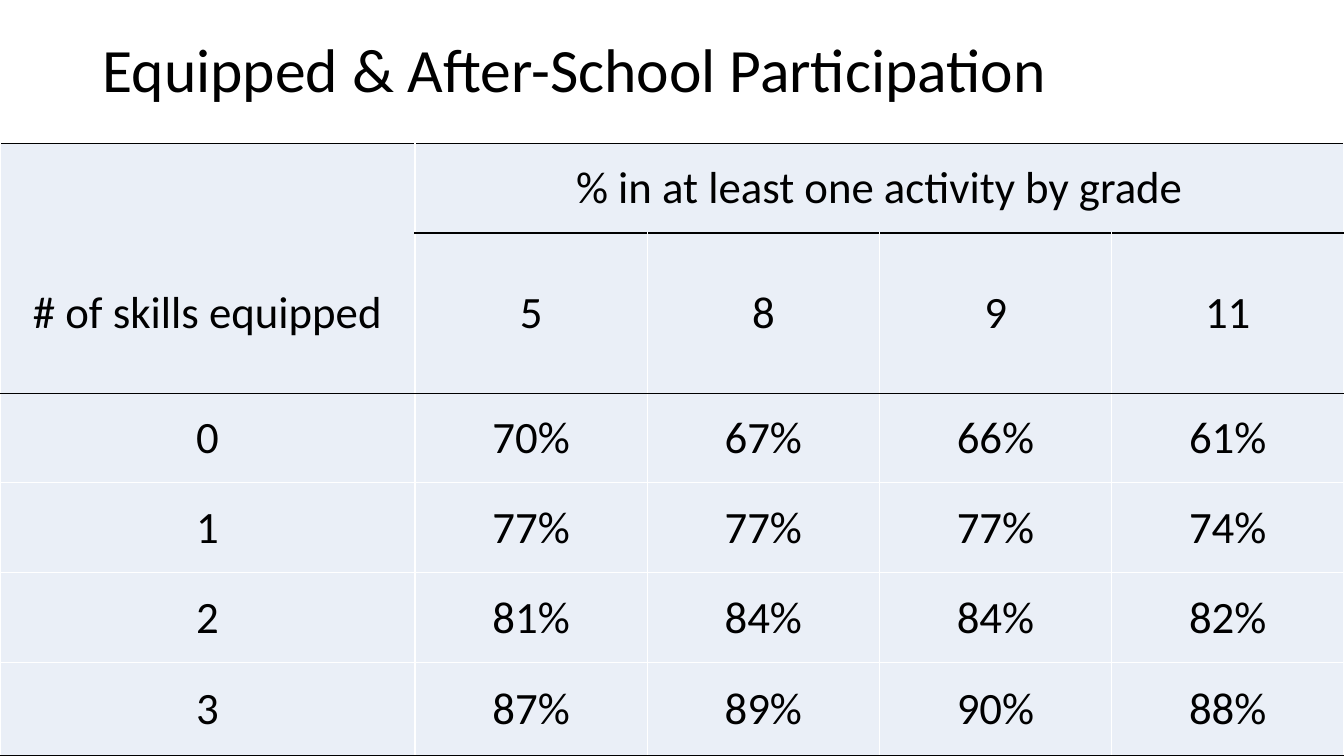
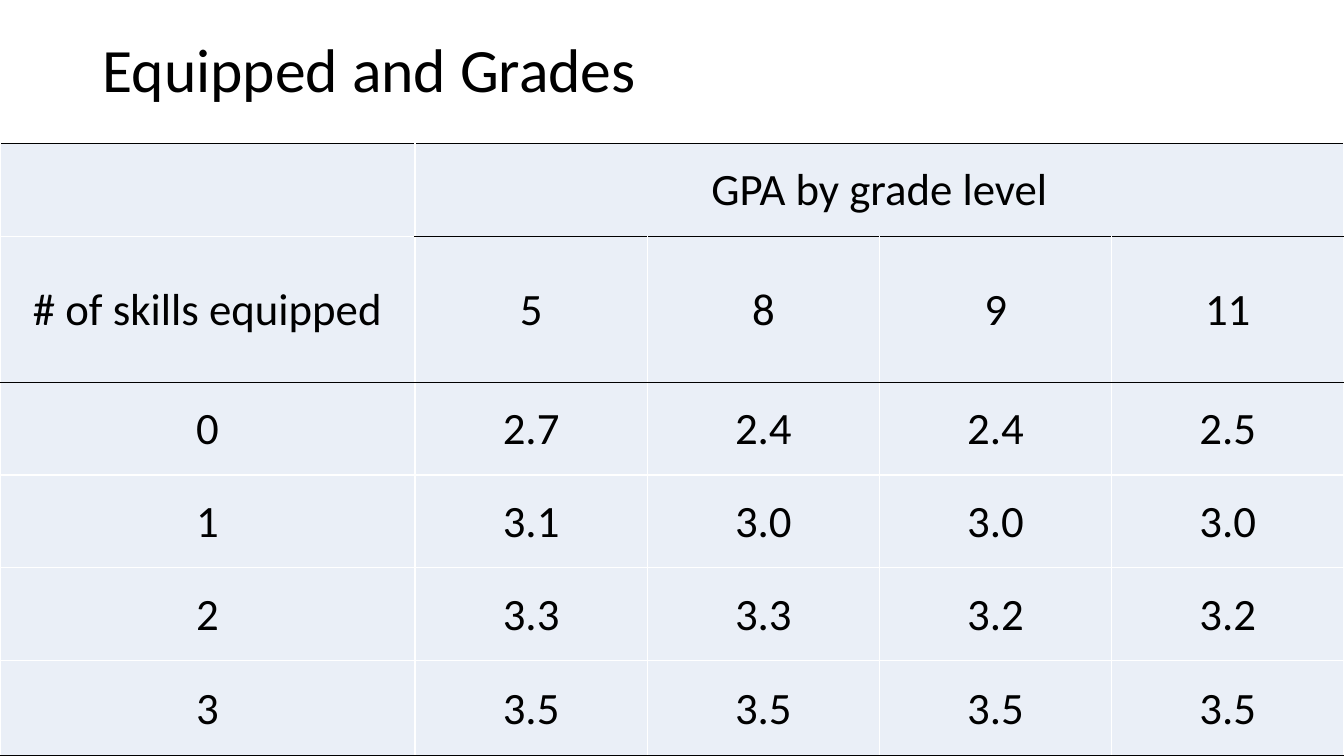
import pptx
import pptx.dml.color
import pptx.enum.text
import pptx.oxml.ns
import pptx.util
from lxml import etree

Cm = pptx.util.Cm
Pt = pptx.util.Pt
PP_ALIGN = pptx.enum.text.PP_ALIGN
MSO_ANCHOR = pptx.enum.text.MSO_ANCHOR

FONT = "Calibri"
BLACK, WHITE, PALE = "000000", "FFFFFF", "EAEFF7"
SLIDE_W, SLIDE_H = 33.87, 19.05
TABLE_TOP = 3.61
LABEL_W = 10.46
HEADER = ["# of skills equipped", "5", "8", "9", "11"]
RULES = [BLACK, BLACK, BLACK, WHITE, WHITE, WHITE, BLACK]

SLIDES = [
    {
        "title": "Equipped & After-School Participation",
        "group": "% in at least one activity by grade",
        "heights": [2.26, 4.04, 2.26, 2.26, 2.26, 2.36],
        "label_rule": None,
        "rows": [
            ["0", "70%", "67%", "66%", "61%"],
            ["1", "77%", "77%", "77%", "74%"],
            ["2", "81%", "84%", "84%", "82%"],
            ["3", "87%", "89%", "90%", "88%"],
        ],
    },
    {
        "title": "Equipped and Grades",
        "group": "GPA by grade level",
        "heights": [2.34, 3.68, 2.34, 2.34, 2.34, 2.4],
        "label_rule": WHITE,
        "rows": [
            ["0", "2.7", "2.4", "2.4", "2.5"],
            ["1", "3.1", "3.0", "3.0", "3.0"],
            ["2", "3.3", "3.3", "3.2", "3.2"],
            ["3", "3.5", "3.5", "3.5", "3.5"],
        ],
    },
]


def rgb(color):
    return pptx.dml.color.RGBColor.from_string(color)


def add_run(p, text, size):
    r = p.add_run()
    r.text = text
    r.font.name = FONT
    r.font.size = Pt(size)
    r.font.bold = False
    r.font.color.rgb = rgb(BLACK)


def add_border(cell, side, color):
    qn = pptx.oxml.ns.qn
    tcPr = cell._tc.get_or_add_tcPr()
    ln = etree.SubElement(tcPr, qn("a:ln" + side), w=str(Pt(1)))
    if color is None:
        etree.SubElement(ln, qn("a:noFill"))
    else:
        fill = etree.SubElement(ln, qn("a:solidFill"))
        etree.SubElement(fill, qn("a:srgbClr"), val=color)


def format_cell(cell, text, top, bottom):
    for side, color in zip("LRTB", (WHITE, WHITE, top, bottom)):
        add_border(cell, side, color)
    cell.fill.solid()
    cell.fill.fore_color.rgb = rgb(PALE)
    cell.vertical_anchor = MSO_ANCHOR.MIDDLE
    cell.margin_left = cell.margin_right = cell.margin_top = Cm(0.03)
    cell.margin_bottom = 0
    p = cell.text_frame.paragraphs[0]
    p.alignment = PP_ALIGN.CENTER
    if text:
        add_run(p, text, 32)


def add_grade_table(s, content):
    heights = content["heights"]
    rows = [["", content["group"], "", "", ""], HEADER] + content["rows"]
    n_cols = len(HEADER)
    table = s.shapes.add_table(
        len(rows), n_cols, 0, Cm(TABLE_TOP), Cm(SLIDE_W), Cm(sum(heights))
    ).table
    table.first_row = False
    table.horz_banding = False
    grade_w = (SLIDE_W - LABEL_W) / (n_cols - 1)
    for i, column in enumerate(table.columns):
        column.width = Cm(grade_w if i else LABEL_W)
    for row, height in zip(table.rows, heights):
        row.height = Cm(height)

    label_rules = RULES[:1] + [content["label_rule"]] + RULES[2:]
    for i, texts in enumerate(rows):
        for j, text in enumerate(texts):
            rules = RULES if j else label_rules
            format_cell(table.cell(i, j), text, rules[i], rules[i + 1])
    table.cell(0, 1).merge(table.cell(0, n_cols - 1))


def main():
    prs = pptx.Presentation()
    prs.slide_width, prs.slide_height = Cm(SLIDE_W), Cm(SLIDE_H)
    layout = prs.slide_layouts.get_by_name("Title Only")
    title = layout.placeholders[0]
    title.left, title.top = Cm(2.33), 0
    title.width, title.height = Cm(29.21), Cm(3.68)

    for content in SLIDES:
        s = prs.slides.add_slide(layout)
        tf = s.shapes.title.text_frame
        tf.vertical_anchor = MSO_ANCHOR.MIDDLE
        p = tf.paragraphs[0]
        p.alignment = PP_ALIGN.LEFT
        p.line_spacing = 0.9
        add_run(p, content["title"], 44)
        add_grade_table(s, content)

    prs.save("out.pptx")


if __name__ == "__main__":
    main()
